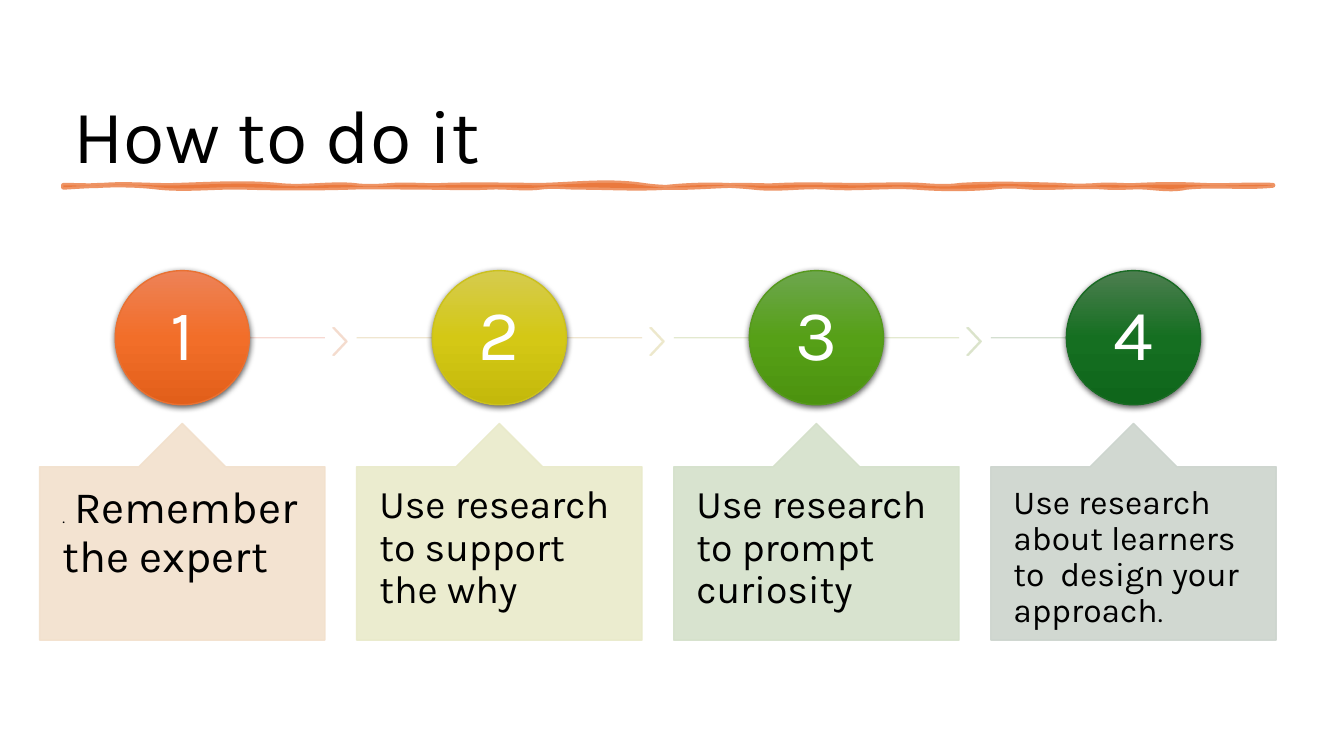
from dataclasses import dataclass

from lxml.etree import SubElement
from pptx import Presentation
from pptx.dml.color import RGBColor as Color
from pptx.enum.shapes import MSO_CONNECTOR as Connector, MSO_SHAPE as Shape
from pptx.enum.text import MSO_ANCHOR as Anchor, PP_ALIGN as Align
from pptx.oxml.ns import qn
from pptx.util import Cm, Pt


@dataclass(frozen=True)
class Theme:
    font: str = "Karla"
    text: str = "000000"
    number: str = "FFFFFF"
    brush: str = "E97132"
    shadow: str = "000000"
    title_size: int = 54
    number_size: int = 51
    brush_width: float = 3.5
    thin_width: float = 1
    brush_alpha: int = 75
    pale_alpha: int = 90


@dataclass(frozen=True)
class Step:
    runs: list  # (text, size) pairs
    gradient: list  # top, middle and bottom colours
    outline: str
    callout: str
    link: str
    chevron: str = ""


STEPS = [
    Step([(".", 11), (" ", 28), ("Remember the expert", 32)],
         ["ED8257", "F26E29", "E25F1A"], "E97132", "F2E0CC", "F7D5CE", "F4DBCD"),
    Step([("Use research to support the why", 28)],
         ["D5CB4E", "D4C815", "C4B90B"], "CBC11E", "E9EACA", "EFE4CB", "EDE8CB"),
    Step([("Use research to prompt curiosity", 28)],
         ["6DA64E", "56A017", "4C930F"], "56991D", "D4E0CA", "E1E7CA", "DAE3CA"),
    Step([("Use research about learners to  design your approach", 24), (".", 20)],
         ["4D7E50", "156F21", "0F661B"], "196B24", "CCD4CD", "D0DCCB"),
]

# Layout in centimetres
FIRST_LEFT, PITCH = 1, 7.99
CALLOUT_TOP, CALLOUT_WIDTH, CALLOUT_HEIGHT = 10.67, 7.19, 5.46
CIRCLE_TOP, CIRCLE_SIZE = 6.82, 3.38
LINK_Y = 8.51
BRUSH_LEFT, BRUSH_TOP, BRUSH_BOTTOM = 1.6, 4.67, 4.72
WOBBLE = 0.025

# Brush edges: (end x, first pull, second pull), pulls in units of WOBBLE
TOP_EDGE = [
    (2.6, 0, 1), (4.5, -2, 1), (7, -1, -3), (8.9, 3, -2), (9.9, 2, 1),
    (11.2, -1, 1), (13.7, -1, 0), (16.2, -1, -5), (18.7, 5, 0), (19.7, 0, 1),
    (21.6, -1, 0), (23.2, 0, -1), (24.2, 1, 2), (26.7, -2, -1), (27.7, 1, 1),
    (28.7, -1, 1), (30.3, -1, -1), (32.08, 1, -1),
]
BOTTOM_EDGE = [
    (29.9, 1, -3), (28.9, 3, 1), (27.9, -1, 1), (26, -2, 1), (25, -1, -2),
    (23.1, 2, 2), (20.9, -2, 2), (19, -2, 3), (16.8, -3, -3), (14.6, 2, 0),
    (13.6, 0, -2), (12.3, 2, -1), (10.7, 1, 0), (8.8, 0, -1), (6.2, 1, 1),
    (4, -1, 3), (1.6, -4, -2),
]


def edge_points(start, base, edge):
    """Give two control points and an end point for each curve of a brush edge."""
    points = []
    for end, first, second in edge:
        for share, pull in ((1 / 3, first), (2 / 3, second), (1, 0)):
            points.append((Cm(start + (end - start) * share), Cm(base + WOBBLE * pull)))
        start = end
    return points


def curve_segments(shape):
    """Turn each three line segments of a freeform into one cubic curve."""
    lines = list(shape._element.spPr.iter(qn("a:lnTo")))
    for first in range(0, len(lines) - 2, 3):
        outline = lines[first].getparent()
        curve = SubElement(outline, qn("a:cubicBezTo"))
        lines[first].addprevious(curve)
        for line in lines[first:first + 3]:
            curve.append(line[0])
            outline.remove(line)


def set_alpha(shape, percent):
    for color in shape._element.spPr.iter(qn("a:srgbClr")):
        SubElement(color, qn("a:alpha"), val=str(percent * 1000))


def write_text(shape, runs, *, theme, color, align=Align.LEFT, anchor=Anchor.TOP,
               margins=(0.25, 0.13)):
    frame = shape.text_frame
    frame.word_wrap = True
    frame.vertical_anchor = anchor
    frame.margin_left = frame.margin_right = Cm(margins[0])
    frame.margin_top = frame.margin_bottom = Cm(margins[1])
    paragraph = frame.paragraphs[0]
    paragraph.alignment = align
    paragraph.line_spacing = 0.9
    for text, size in runs:
        run = paragraph.add_run()
        run.text = text
        run.font.name = theme.font
        run.font.size = Pt(size)
        run.font.color.rgb = Color.from_string(color)


class SlideBuilder:
    def __init__(self, slide, theme):
        self.shapes = slide.shapes
        self.theme = theme

    def paint(self, shape, fill, line, width, alpha=100):
        shape.shadow.inherit = False
        shape.fill.solid()
        shape.fill.fore_color.rgb = Color.from_string(fill)
        shape.line.color.rgb = Color.from_string(line)
        shape.line.width = Pt(width)
        if alpha < 100:
            set_alpha(shape, alpha)

    def pale_shape(self, kind, left, top, width, height, color, adjustments):
        shape = self.shapes.add_shape(kind, Cm(left), Cm(top), Cm(width), Cm(height))
        for index, value in enumerate(adjustments):
            shape.adjustments[index] = value
        self.paint(shape, color, color, self.theme.thin_width, self.theme.pale_alpha)
        return shape

    def title(self, text):
        box = self.shapes.add_textbox(Cm(1.6), Cm(0.66), Cm(30.6), Cm(3.99))
        write_text(box, [(text, self.theme.title_size)], theme=self.theme,
                   color=self.theme.text, anchor=Anchor.BOTTOM)

    def brush_stroke(self):
        builder = self.shapes.build_freeform(Cm(BRUSH_LEFT), Cm(BRUSH_TOP))
        builder.add_line_segments(
            edge_points(BRUSH_LEFT, BRUSH_TOP, TOP_EDGE)
            + edge_points(TOP_EDGE[-1][0], BRUSH_BOTTOM, BOTTOM_EDGE))
        stroke = builder.convert_to_shape()
        curve_segments(stroke)
        self.paint(stroke, self.theme.brush, self.theme.brush,
                   self.theme.brush_width, self.theme.brush_alpha)

    def link(self, start, end, color):
        line = self.shapes.add_connector(
            Connector.STRAIGHT, Cm(start), Cm(LINK_Y), Cm(end), Cm(LINK_Y))
        line.line.color.rgb = Color.from_string(color)
        line.line.width = Pt(self.theme.thin_width)
        set_alpha(line, self.theme.pale_alpha)
        SubElement(line._element.spPr, qn("a:effectLst"))

    def chevron(self, left, color):
        self.pale_shape(Shape.CHEVRON, left, 8.26, 0.36, 0.69, color, [0.9])

    def circle(self, left, number, step):
        shape = self.shapes.add_shape(
            Shape.OVAL, Cm(left), Cm(CIRCLE_TOP), Cm(CIRCLE_SIZE), Cm(CIRCLE_SIZE))
        self.paint(shape, step.outline, step.outline, self.theme.thin_width)
        properties = shape._element.spPr
        gradient = SubElement(properties, qn("a:gradFill"), rotWithShape="1")
        stops = SubElement(gradient, qn("a:gsLst"))
        for index, color in enumerate(step.gradient):
            stop = SubElement(stops, qn("a:gs"), pos=str(index * 50000))
            SubElement(stop, qn("a:srgbClr"), val=color)
        SubElement(gradient, qn("a:lin"), ang="5400000", scaled="0")
        properties.replace(properties.find(qn("a:solidFill")), gradient)
        shadow = SubElement(
            properties.find(qn("a:effectLst")), qn("a:outerShdw"), blurRad=str(Pt(4.5)),
            dist=str(Pt(1.5)), dir="5400000", algn="ctr", rotWithShape="0")
        color = SubElement(shadow, qn("a:srgbClr"), val=self.theme.shadow)
        SubElement(color, qn("a:alpha"), val="63000")
        write_text(shape, [(str(number), self.theme.number_size)], theme=self.theme,
                   color=self.theme.number, align=Align.CENTER, anchor=Anchor.MIDDLE,
                   margins=(0.13, 0.13))

    def callout(self, left, step):
        shape = self.pale_shape(Shape.UP_ARROW_CALLOUT, left, CALLOUT_TOP, CALLOUT_WIDTH,
                                CALLOUT_HEIGHT, step.callout, [0.4, 0.2, 0.2, 0.8])
        write_text(shape, step.runs, theme=self.theme, color=self.theme.text,
                   margins=(0.57, 0.46))

    def step(self, index, step):
        left = FIRST_LEFT + index * PITCH
        right, center = left + CALLOUT_WIDTH, left + CALLOUT_WIDTH / 2
        is_first, is_last = index == 0, index == len(STEPS) - 1
        self.link(center if is_first else left, center if is_last else right, step.link)
        if not is_last:
            self.chevron(left + 7.39, step.chevron)
        self.circle(center - CIRCLE_SIZE / 2, index + 1, step)
        self.callout(left, step)


def main():
    presentation = Presentation()
    presentation.slide_width, presentation.slide_height = Cm(33.87), Cm(19.05)
    slide = presentation.slides.add_slide(presentation.slide_layouts[6])
    builder = SlideBuilder(slide, Theme())
    builder.title("How to do it")
    builder.brush_stroke()
    for index, step in enumerate(STEPS):
        builder.step(index, step)
    presentation.save("out.pptx")


if __name__ == "__main__":
    main()
